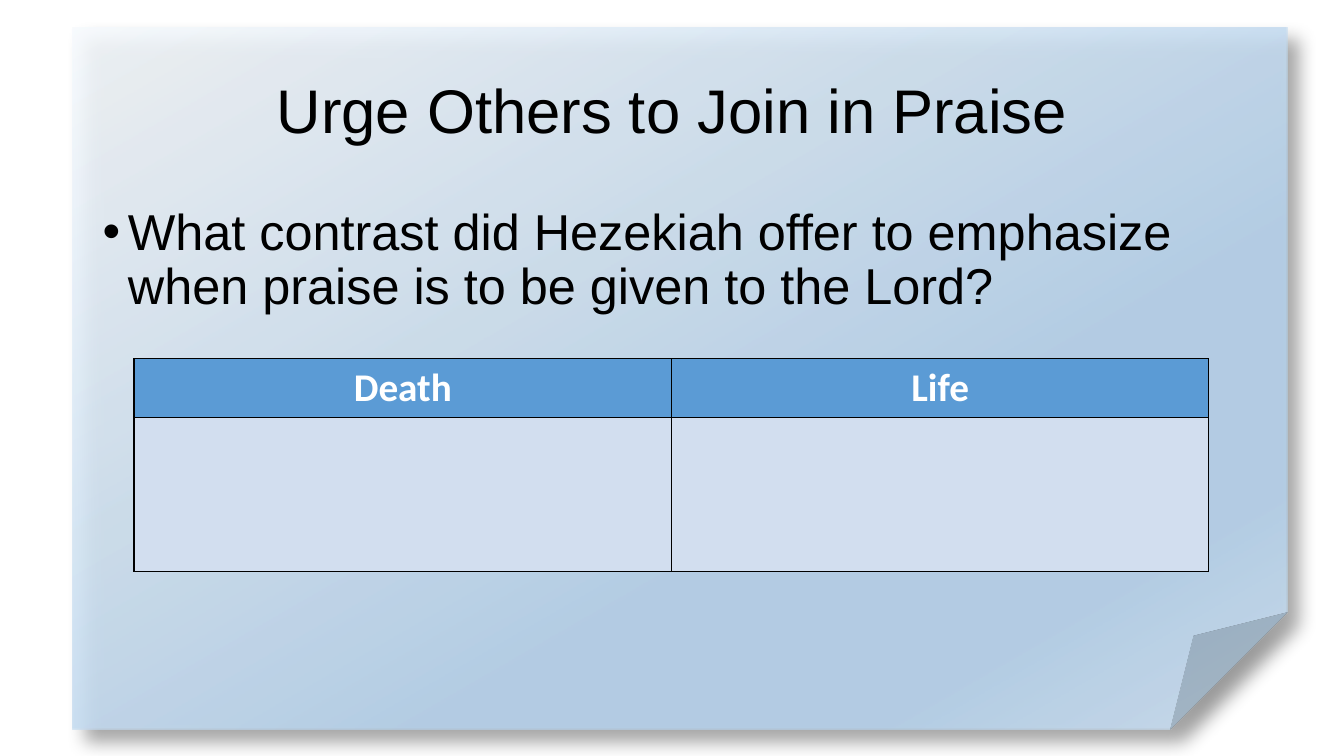
"""Build the slide on praise, with its contrast table on a folded sheet."""
from lxml.etree import SubElement as Sub
from pptx import Presentation
from pptx.dml.color import RGBColor
from pptx.enum.shapes import MSO_SHAPE as Shape
from pptx.enum.text import MSO_ANCHOR as Anchor, PP_ALIGN as Align
from pptx.oxml.ns import qn
from pptx.util import Inches, Pt

TITLE = "Urge Others to Join in Praise"
QUESTION = ("What contrast did Hezekiah offer to emphasize "
            "when praise is to be given to the Lord?")
HEADS = ["Death", "Life"]
STOPS = [(0, "F7FAFD"), (64, "B5D2EC"), (83, "B5D2EC"), (100, "CEE1F2")]
ROWS = [0.58, 1.53]
COL = 5.33
BLACK = RGBColor(0x00, 0x00, 0x00)
WHITE = RGBColor(0xFF, 0xFF, 0xFF)
FILLS = [RGBColor(0x5B, 0x9B, 0xD5), RGBColor(0xD2, 0xDE, 0xEF)]


def add_color(parent, value, alpha):
    color = Sub(parent, qn("a:srgbClr"), val=value)
    Sub(color, qn("a:alpha"), val=str(alpha * 1000))


def add_sheet(slide):
    box = map(Inches, (0.72, 0.27, 12.05, 6.97))
    sheet = slide.shapes.add_shape(Shape.FOLDED_CORNER, *box)
    sheet.line.fill.background()
    sheet.fill.gradient()
    sheet.fill.gradient_angle = 300
    stops = next(sheet._element.spPr.iter(qn("a:gsLst")))
    for stop in list(stops):
        stops.remove(stop)
    for place, value in STOPS:
        add_color(Sub(stops, qn("a:gs"), pos=str(place * 1000)), value, 87)
    sheet.shadow.inherit = False
    effects = sheet._element.spPr.find(qn("a:effectLst"))
    shadow = Sub(effects, qn("a:outerShdw"), blurRad=str(Pt(13)),
                 dist=str(Pt(13)), dir="2700000", algn="tl", rotWithShape="0")
    add_color(shadow, "000000", 40)


def add_run(para, text, size, color, face="Arial", bold=False):
    run = para.add_run()
    run.text = text
    font = run.font
    font.name, font.size, font.bold = face, Pt(size), bold
    font.color.rgb = color


def add_box(slide, top, height, text, size):
    box = slide.shapes.add_textbox(Inches(0.92), Inches(top),
                                   Inches(11.5), Inches(height))
    frame = box.text_frame
    frame.word_wrap = True
    para = frame.paragraphs[0]
    para.line_spacing = 0.9
    add_run(para, text, size, BLACK)
    return frame, para


def add_border(cell):
    props = cell._tc.get_or_add_tcPr()
    for spot, side in enumerate(("a:lnL", "a:lnR", "a:lnT", "a:lnB")):
        line = Sub(props, qn(side), w=str(Pt(1)))
        props.insert(spot, line)
        fill = Sub(line, qn("a:solidFill"))
        Sub(fill, qn("a:srgbClr"), val="000000")


def add_grid(slide):
    size = (1.33, 3.56, COL * len(HEADS), sum(ROWS))
    table = slide.shapes.add_table(len(ROWS), len(HEADS),
                                   *map(Inches, size)).table
    table.horz_banding = False
    for col in table.columns:
        col.width = Inches(COL)
    for row, height, color in zip(table.rows, ROWS, FILLS):
        row.height = Inches(height)
        for cell in row.cells:
            cell.fill.solid()
            cell.fill.fore_color.rgb = color
            add_border(cell)
    for cell, head in zip(table.rows[0].cells, HEADS):
        para = cell.text_frame.paragraphs[0]
        para.alignment = Align.CENTER
        add_run(para, head, 28, WHITE, "Calibri", True)


def main():
    deck = Presentation()
    deck.slide_width, deck.slide_height = Inches(13.33), Inches(7.5)
    slide = deck.slides.add_slide(deck.slide_layouts[6])
    add_sheet(slide)
    frame, para = add_box(slide, 0.4, 1.45, TITLE, 44)
    frame.vertical_anchor = Anchor.MIDDLE
    para.alignment = Align.CENTER
    frame, para = add_box(slide, 2, 4.76, QUESTION, 36)
    props = para._p.get_or_add_pPr()
    props.set("marL", str(Inches(0.25)))
    props.set("indent", str(Inches(-0.25)))
    Sub(props, qn("a:buFont"), typeface="Arial")
    Sub(props, qn("a:buChar"), char="•")
    add_grid(slide)
    deck.save("out.pptx")


if __name__ == "__main__":
    main()
